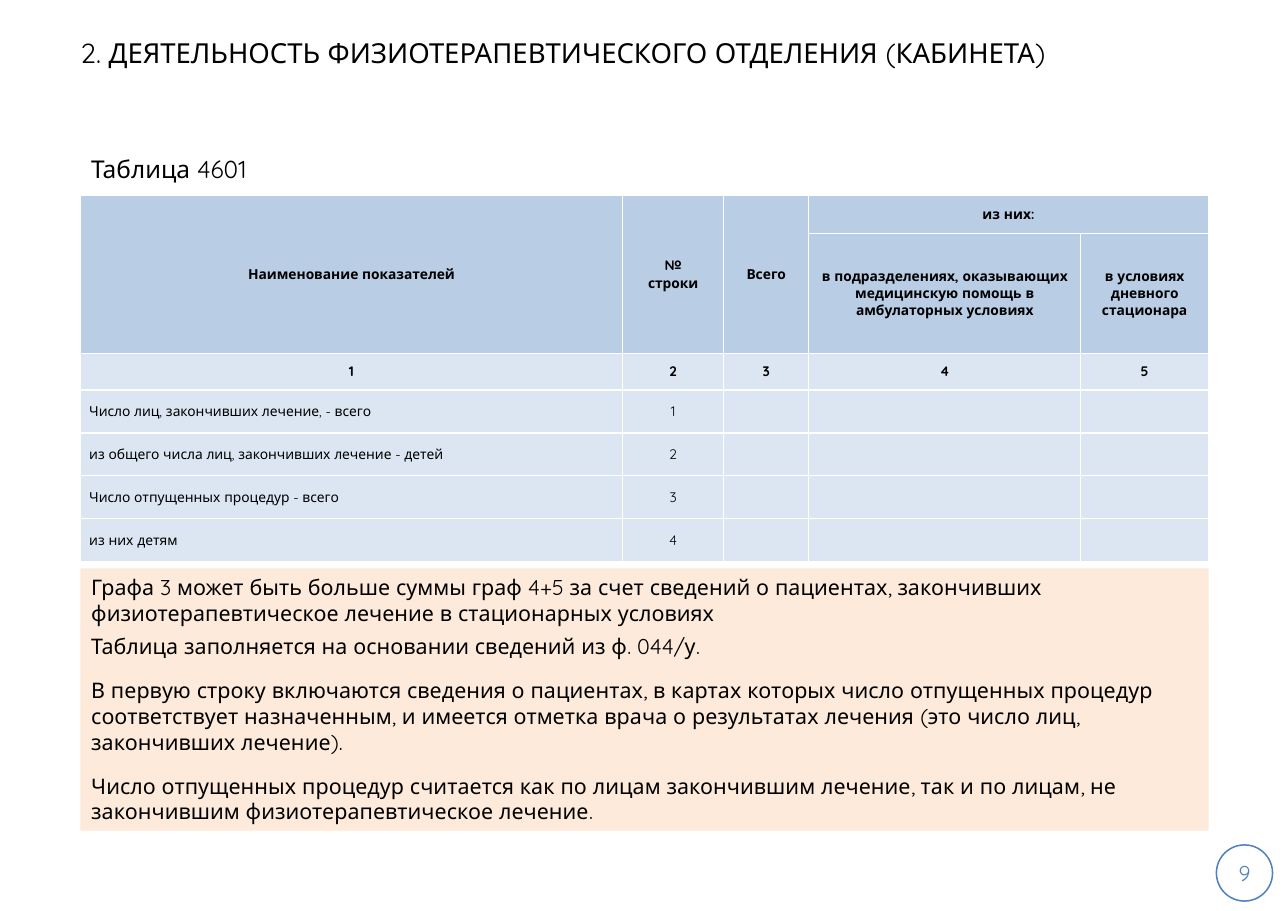
from lxml import etree
from pptx import Presentation, util as u
from pptx.dml.color import RGBColor
from pptx.enum import shapes, text
from pptx.oxml import ns

BLACK = RGBColor(0, 0, 0)
WHITE = RGBColor(0xFF, 0xFF, 0xFF)
BLUE = RGBColor(0x4F, 0x81, 0xBD)
HEAD = RGBColor(0xB9, 0xCD, 0xE5)
PALE = RGBColor(0xDC, 0xE6, 0xF2)
PEACH = RGBColor(0xFD, 0xEA, 0xDA)
FONT = "Quicksand"
LEFT, WIDE = 0.73, 10.24
MID, START = text.PP_ALIGN.CENTER, text.PP_ALIGN.LEFT

COLS = [4.92, 0.92, 0.77, 2.47, 1.16]
ROWS = [0.35, 1.09, 0.33] + [0.39] * 4
CELLS = [
    ["Наименование показателей", "№\nстроки", "Всего", "из них:", ""],
    ["", "", "", "в подразделениях, оказывающих медицинскую помощь в амбулаторных условиях",
     "в условиях дневного стационара"],
    ["1", "2", "3", "4", "5"],
    ["Число лиц, закончивших лечение, - всего", "1", "", "", ""],
    ["из общего числа лиц, закончивших лечение - детей", "2", "", "", ""],
    ["Число отпущенных процедур - всего", "3", "", "", ""],
    ["из них детям", "4", "", "", ""],
]
MERGES = [(0, 0, 1, 0), (0, 1, 1, 1), (0, 2, 1, 2), (0, 3, 0, 4)]
SUMS = ["Графа 3 может быть больше суммы граф 4+5 за счет сведений о пациентах, "
        "закончивших физиотерапевтическое лечение в стационарных условиях"]
RULES = [
    "Таблица заполняется на основании сведений из ф. 044/у.",
    "В первую строку включаются сведения о пациентах, в картах которых число отпущенных "
    "процедур соответствует назначенным, и имеется отметка врача о результатах лечения "
    "(это число лиц, закончивших лечение).",
    "Число отпущенных процедур считается как по лицам закончившим лечение, "
    "так и по лицам, не закончившим физиотерапевтическое лечение.",
]


def place(box):
    return [u.Inches(v) for v in box]


def write(frame, words, size, color=BLACK, align=START, bold=False, after=0):
    frame.text = words
    frame.word_wrap = True
    frame.vertical_anchor = text.MSO_ANCHOR.MIDDLE
    for para in frame.paragraphs:
        para.alignment = align
        para.space_after = u.Pt(after)
        for run in para.runs:
            font = run.font
            font.name, font.size, font.bold = FONT, u.Pt(size), bold
            font.color.rgb = color


def add_title(slide, box):
    title = slide.shapes.title
    title.left, title.top, title.width, title.height = place(box)
    frame = title.text_frame
    frame.auto_size = text.MSO_AUTO_SIZE.NONE
    frame.margin_left = 0
    write(frame, "2. ДЕЯТЕЛЬНОСТЬ ФИЗИОТЕРАПЕВТИЧЕСКОГО ОТДЕЛЕНИЯ (КАБИНЕТА)", 18)


def add_label(slide, box):
    label = slide.shapes.add_textbox(*place(box))
    write(label.text_frame, "Таблица 4601", 16)


def add_note(slide, box, lines):
    note = slide.shapes.add_shape(shapes.MSO_SHAPE.RECTANGLE, *place(box))
    note.shadow.inherit = False
    note.fill.solid()
    note.fill.fore_color.rgb = PEACH
    note.line.fill.background()
    write(note.text_frame, "\n".join(lines), 14, after=12)


def add_badge(slide, box):
    badge = slide.shapes.add_shape(shapes.MSO_SHAPE.OVAL, *place(box))
    badge.shadow.inherit = False
    badge.fill.background()
    badge.line.color.rgb = BLUE
    badge.line.width = u.Pt(1)
    frame = badge.text_frame
    frame.margin_left = frame.margin_right = frame.margin_top = frame.margin_bottom = 0
    write(frame, "9", 14, BLUE, MID)


def frame_cell(cell):
    """Draw white borders on all four sides, ahead of the cell's fill."""
    props = cell._tc.get_or_add_tcPr()
    for spot, side in enumerate(("lnL", "lnR", "lnT", "lnB")):
        line = etree.Element(ns.qn("a:" + side), w=str(u.Pt(1)))
        fill = etree.SubElement(line, ns.qn("a:solidFill"))
        etree.SubElement(fill, ns.qn("a:srgbClr"), val=str(WHITE))
        props.insert(spot, line)


def fill_cell(cell, words, row, col):
    cell.margin_left = cell.margin_right = u.Inches(0.08)
    cell.margin_top = cell.margin_bottom = u.Inches(0.04)
    cell.fill.solid()
    cell.fill.fore_color.rgb = HEAD if row < 2 else PALE
    frame_cell(cell)
    align = START if row > 2 and col == 0 else MID
    write(cell.text_frame, words, 9, align=align, bold=row < 3)
    cell.vertical_anchor = text.MSO_ANCHOR.MIDDLE
    if not words:
        cell.text_frame.paragraphs[0]._p.get_or_add_endParaRPr().set("sz", "900")


def add_grid(slide, box):
    grid = slide.shapes.add_table(len(ROWS), len(COLS), *place(box)).table
    grid.horz_banding = False
    for col, width in zip(grid.columns, COLS):
        col.width = u.Inches(width)
    for row, height in zip(grid.rows, ROWS):
        row.height = u.Inches(height)
    for r, line in enumerate(CELLS):
        for c, words in enumerate(line):
            fill_cell(grid.cell(r, c), words, r, c)
    for top, left, low, right in MERGES:
        grid.cell(top, left).merge(grid.cell(low, right))


def main():
    deck = Presentation()
    deck.slide_width, deck.slide_height = u.Inches(11.69), u.Inches(8.27)
    slide = deck.slides.add_slide(deck.slide_layouts[5])
    add_title(slide, (LEFT, 0, 10.96, 0.95))
    add_note(slide, (LEFT, 5.69, WIDE, 1.85), RULES)
    add_grid(slide, (LEFT, 1.77, WIDE, sum(ROWS)))
    add_note(slide, (LEFT, 5.16, WIDE, 0.57), SUMS)
    add_label(slide, (LEFT, 1.3, WIDE, 0.46))
    add_badge(slide, (11.04, 7.67, 0.51, 0.51))
    deck.save("out.pptx")


if __name__ == "__main__":
    main()
